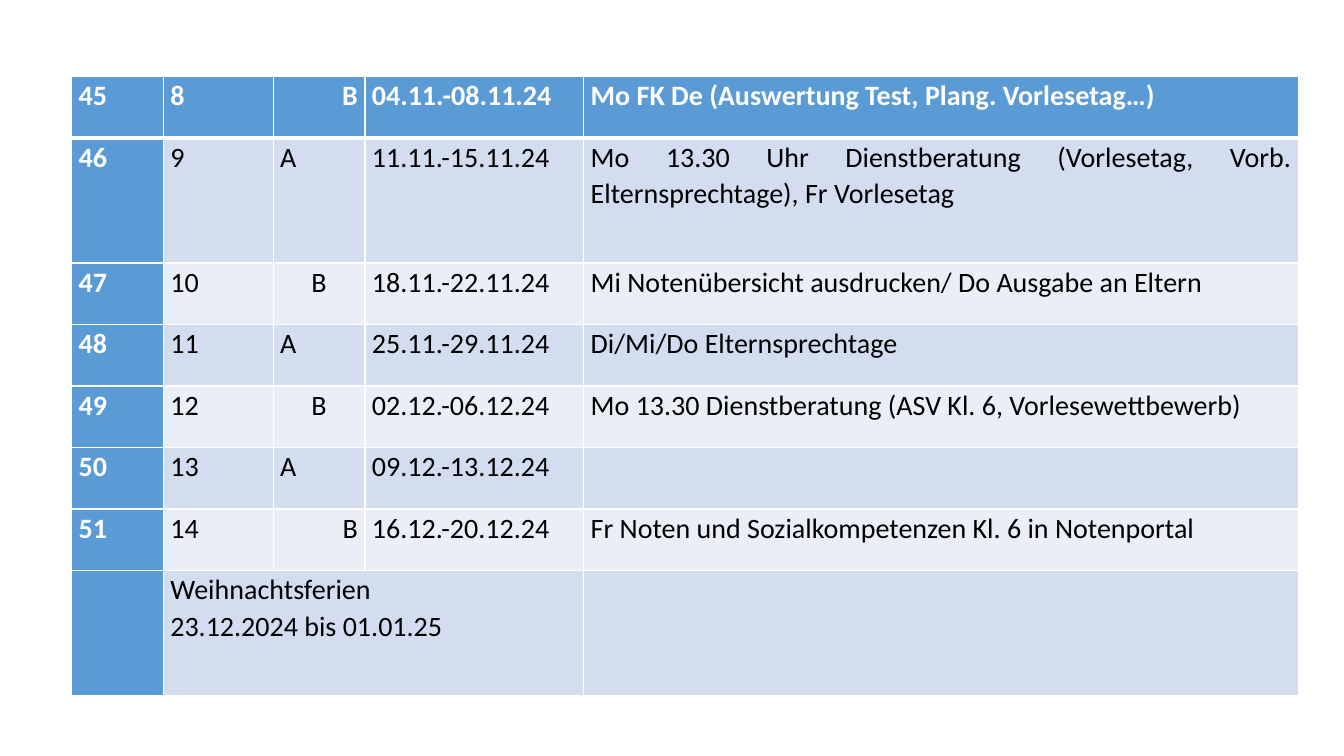
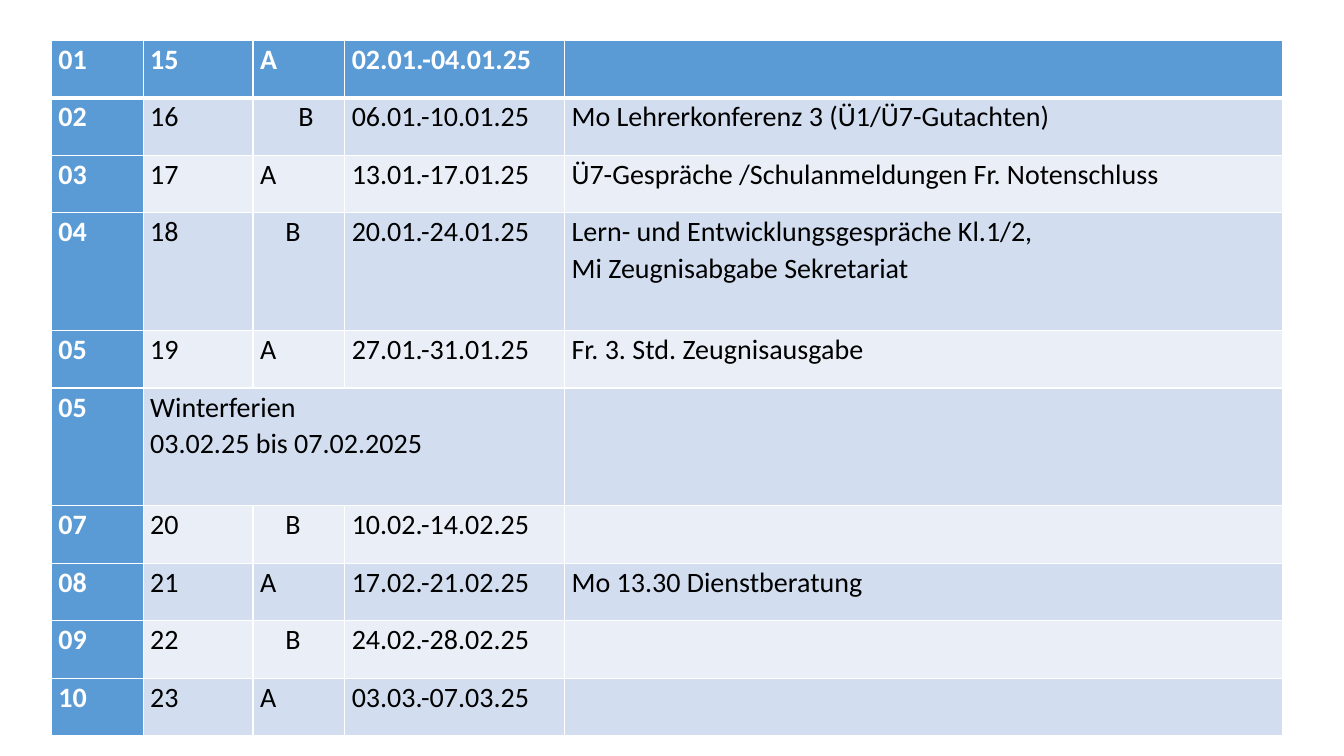
from dataclasses import dataclass

from lxml import etree
from pptx import Presentation
from pptx.dml.color import RGBColor
from pptx.enum.text import MSO_ANCHOR, PP_ALIGN
from pptx.oxml.ns import qn
from pptx.util import Inches, Pt

LEFT, RIGHT, JUSTIFY = PP_ALIGN.LEFT, PP_ALIGN.RIGHT, PP_ALIGN.JUSTIFY
TOP = MSO_ANCHOR.TOP


@dataclass(frozen=True)
class Theme:
    font: str = "Calibri"
    size: int = 20
    accent: str = "5B9BD5"
    bands: tuple = ("EAEFF7", "D2DEEF")  # even rows, odd rows
    light: str = "FFFFFF"
    dark: str = "000000"
    line: int = 1
    header_line: int = 3
    line_spacing: float = 1.07
    space_after: int = 8
    margin: float = 0.07


THEME = Theme()

# Week rows: calendar week, school week, A/B week, dates, note
# Holiday rows: calendar week, holiday, note
# b_indents: place of each B by calendar week, as an indent in inches or RIGHT
PLANS = [
    {
        "at": (0.71, 0.76),
        "cols": (0.91, 1.09, 0.91, 2.17, 7.09),
        "row_height": 0.61,
        "tall_height": 1.24,
        "tall_weeks": ("46", ""),
        "b_indents": {"45": RIGHT, "47": 0.31, "49": 0.31, "51": RIGHT},
        "rows": [
            ("45", "8", "B", "04.11.-08.11.24", "Mo FK De (Auswertung Test, Plang. Vorlesetag…)"),
            ("46", "9", "A", "11.11.-15.11.24",
             "Mo 13.30 Uhr Dienstberatung (Vorlesetag, Vorb. Elternsprechtage), Fr Vorlesetag"),
            ("47", "10", "B", "18.11.-22.11.24", "Mi Notenübersicht ausdrucken/ Do Ausgabe an Eltern"),
            ("48", "11", "A", "25.11.-29.11.24", "Di/Mi/Do Elternsprechtage"),
            ("49", "12", "B", "02.12.-06.12.24", "Mo 13.30 Dienstberatung (ASV Kl. 6, Vorlesewettbewerb)"),
            ("50", "13", "A", "09.12.-13.12.24", ""),
            ("51", "14", "B", "16.12.-20.12.24", "Fr Noten und Sozialkompetenzen Kl. 6 in Notenportal"),
            ("", "Weihnachtsferien\n23.12.2024 bis 01.01.25", ""),
        ],
    },
    {
        "at": (0.51, 0.4),
        "cols": (0.91, 1.09, 0.91, 2.18, 7.12),
        "row_height": 0.57,
        "tall_height": 1.17,
        "tall_weeks": ("04",),
        "b_indents": {"02": 0.38, "04": 0.25, "07": 0.25, "09": 0.25},
        "rows": [
            ("01", "15", "A", "02.01.-04.01.25", ""),
            ("02", "16", "B", "06.01.-10.01.25", "Mo Lehrerkonferenz 3 (Ü1/Ü7-Gutachten)"),
            ("03", "17", "A", "13.01.-17.01.25", "Ü7-Gespräche /Schulanmeldungen Fr. Notenschluss"),
            ("04", "18", "B", "20.01.-24.01.25",
             "Lern- und Entwicklungsgespräche Kl.1/2,\nMi Zeugnisabgabe Sekretariat"),
            ("05", "19", "A", "27.01.-31.01.25", "Fr. 3. Std. Zeugnisausgabe"),
            ("05", "Winterferien\n03.02.25 bis 07.02.2025", ""),
            ("07", "20", "B", "10.02.-14.02.25", ""),
            ("08", "21", "A", "17.02.-21.02.25", "Mo 13.30 Dienstberatung"),
            ("09", "22", "B", "24.02.-28.02.25", ""),
            ("10", "23", "A", "03.03.-07.03.25", ""),
        ],
    },
]


def is_holiday(row):
    return len(row) == 3


def set_borders(cell, row_index):
    """White grid with a heavier line below the header row."""
    widths = {"lnL": THEME.line, "lnR": THEME.line,
              "lnT": THEME.header_line if row_index == 1 else THEME.line,
              "lnB": THEME.header_line if row_index == 0 else THEME.line}
    tc_pr = cell._tc.get_or_add_tcPr()
    for side, width in widths.items():
        ln = etree.SubElement(tc_pr, qn("a:" + side), w=str(Pt(width)))
        fill = etree.SubElement(ln, qn("a:solidFill"))
        etree.SubElement(fill, qn("a:srgbClr"), val=THEME.light)


def style_cell(cell, row_index, col_index):
    set_borders(cell, row_index)
    accented = row_index == 0 or col_index == 0
    color = THEME.accent if accented else THEME.bands[row_index % 2]
    cell.fill.solid()
    cell.fill.fore_color.rgb = RGBColor.from_string(color)
    cell.margin_left = cell.margin_right = Inches(THEME.margin)
    cell.margin_top = cell.margin_bottom = 0
    cell.vertical_anchor = TOP


def write_cell(cell, text, accented, place=None):
    p = cell.text_frame.paragraphs[0]
    p.text = text
    p.line_spacing = THEME.line_spacing
    p.space_after = Pt(THEME.space_after)
    p.alignment = LEFT if "\n" in text else JUSTIFY
    if place == RIGHT:
        p.alignment = RIGHT
    elif place:
        p._p.get_or_add_pPr().set("marL", str(Inches(place)))
    for r in p.runs:
        r.font.name = THEME.font
        r.font.size = Pt(THEME.size)
        r.font.bold = accented
        r.font.color.rgb = RGBColor.from_string(THEME.light if accented else THEME.dark)


def add_plan(prs, plan):
    s = prs.slides.add_slide(prs.slide_layouts[6])
    rows, cols = plan["rows"], plan["cols"]
    heights = [plan["tall_height"] if is_holiday(row) or row[0] in plan["tall_weeks"]
               else plan["row_height"] for row in rows]
    left, top = plan["at"]
    table = s.shapes.add_table(len(rows), len(cols), Inches(left), Inches(top),
                               Inches(sum(cols)), Inches(sum(heights))).table
    table.first_row = table.horz_banding = False
    for col, width in zip(table.columns, cols):
        col.width = Inches(width)

    for i, row in enumerate(rows):
        table.rows[i].height = Inches(heights[i])
        for j in range(len(cols)):
            style_cell(table.cell(i, j), i, j)
        # A holiday spans school week, A/B week and dates
        if is_holiday(row):
            table.cell(i, 1).merge(table.cell(i, 3))
        targets = (0, 1, 4) if is_holiday(row) else range(len(cols))
        for j, text in zip(targets, row):
            place = plan["b_indents"].get(row[0]) if text == "B" else None
            write_cell(table.cell(i, j), text, i == 0 or j == 0, place)


def main():
    prs = Presentation()
    prs.slide_width, prs.slide_height = Inches(13.33), Inches(7.5)
    for plan in PLANS:
        add_plan(prs, plan)
    prs.save("out.pptx")


if __name__ == "__main__":
    main()
